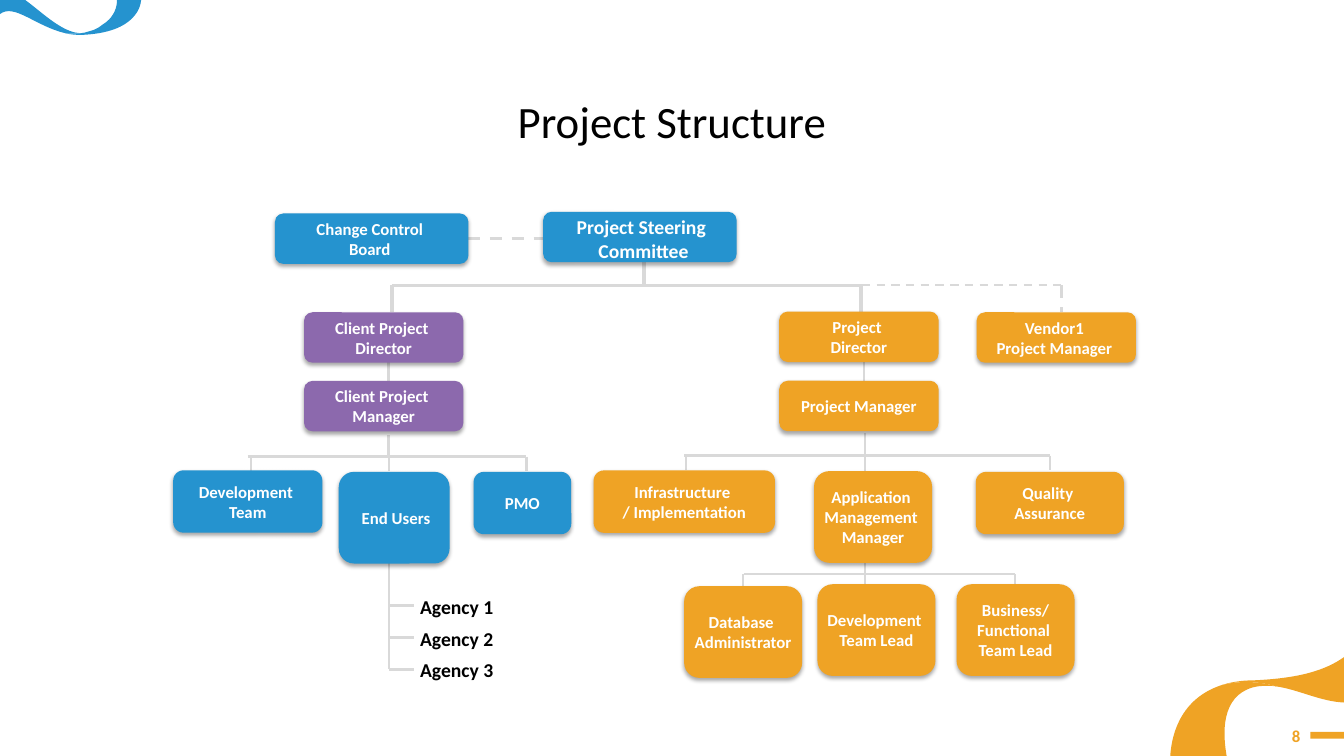
from lxml.etree import SubElement
from pptx import Presentation
from pptx.dml.color import RGBColor
from pptx.enum.dml import MSO_LINE
from pptx.enum.shapes import MSO_CONNECTOR, MSO_SHAPE
from pptx.enum.text import MSO_ANCHOR, MSO_AUTO_SIZE, PP_ALIGN
from pptx.oxml.ns import qn
from pptx.util import Pt

BLUE, ORANGE, PURPLE = "2593CF", "EFA325", "8C69AD"
GREY, WHITE, BLACK = "D9D9D9", "FFFFFF", "000000"

BOXES = [
    ("Change Control \nBoard ", 196.4, 152.5, 138.2, 36, BLUE),
    ("", 388, 151.3, 138.2, 36, BLUE),
    ("Client Project \nDirector", 217.2, 223.1, 113.8, 36, PURPLE),
    ("Client Project \nManager", 217.2, 272.1, 113.8, 36, PURPLE),
    ("Project \nDirector", 556.6, 222.6, 113.8, 36, ORANGE),
    ("Project Manager", 556.6, 272, 113.8, 36, ORANGE),
    ("Vendor1 \nProject Manager ", 697.6, 223.1, 113.8, 36, ORANGE),
    ("Development \nTeam", 123.7, 335.9, 106.6, 44.6, BLUE),
    (" End Users", 242, 337, 79.2, 65.5, BLUE),
    ("PMO", 338.3, 337, 69.8, 44.6, BLUE),
    ("Infrastructure \n/ Implementation", 424, 336, 129.6, 44.6, ORANGE),
    ("Application \nManagement \nManager", 581.5, 336.5, 84.3, 65.5, ORANGE),
    ("Quality \nAssurance", 697, 337, 105.8, 44.6, ORANGE),
    ("Database \nAdministrator", 488.7, 418.7, 84.3, 65.5, ORANGE),
    ("Development \nTeam Lead", 583.9, 417.3, 84.3, 65.5, ORANGE),
    ("Business/\nFunctional \nTeam Lead", 683.3, 417.3, 84.3, 65.5, ORANGE),
]

BRANCHES = [
    ((460, 187.2, 205.2), (280, 203.8, 615.6), (280, 615), 223, 2.25),
    ((277.3, 311, 326), (177.1, 326.2, 375.8), (179.3, 277.9, 375.8), 336.5, 2),
    ((617.8, 309.6, 337.7), (488.9, 325.4, 750.2), (490.3, 750.2), 336, 1.5),
    ((617.8, 402.5, 419), (531.4, 410.2, 725), (530.6, 725), 426, 1.5),
]

RIBBONS = [
    (ORANGE, (895, 491), [
        (900.7, 489.6, 905.8, 489.6, 911.5, 490.3),
        (911.5, 490.3, 892.8, 483.8, 871.9, 489.6),
        (840.2, 500.4, 836.6, 529.9, 835.9, 540),
        (876.2, 540),
        (873.4, 524.2, 871.9, 497.5, 895, 491)]),
    (ORANGE, (895, 486), [
        (886.3, 486, 878.4, 487.4, 871.9, 489.6),
        (892.8, 483.8, 911.5, 490.3, 911.5, 490.3),
        (927.4, 492.5, 943.2, 501.1, 960, 501.8),
        (960, 469.4),
        (946.8, 478.8, 928.1, 484.6, 895, 486)]),
    (BLUE, (100.8, -0.5), [
        (83.5, -0.5),
        (83.5, -0.5, 85, 10.8, 72.7, 18),
        (72.7, 18, 69.8, 20.9, 64.1, 22.3),
        (61.2, 23, 59.8, 23.8, 57.6, 23.8),
        (54.7, 23.8, 51.1, 23.8, 46.8, 23.8),
        (52.6, 25.2, 58.3, 25.2, 64.8, 24.5),
        (101.5, 20.9, 100.8, -0.5, 100.8, -0.5)]),
    (BLUE, (57.6, 23.8), [
        (36.7, 23, 13.7, -12.2, 0, -5.8),
        (0, 10.1),
        (10.1, 2.2, 25.2, 18.7, 46.8, 23.8),
        (51.1, 23.8, 54.7, 23.8, 57.6, 23.8)]),
]


def colour(value):
    return RGBColor.from_string(value)


def place(shape, left, top, width, height):
    shape.left, shape.top = Pt(left), Pt(top)
    shape.width, shape.height = Pt(width), Pt(height)


def paint(shape, fill):
    shape.shadow.inherit = False
    shape.fill.solid()
    shape.fill.fore_color.rgb = colour(fill)
    shape.line.fill.background()


def write(shape, text, size, ink, align, bold=True, wrap=False):
    frame = shape.text_frame
    frame.text = text
    frame.word_wrap = wrap
    frame.auto_size = MSO_AUTO_SIZE.NONE
    frame.vertical_anchor = MSO_ANCHOR.MIDDLE
    for para in frame.paragraphs:
        para.alignment = align
        for span in para.runs:
            span.font.name = "Calibri"
            span.font.size = Pt(size)
            span.font.bold = bold
            span.font.color.rgb = colour(ink)


def add_label(page, text, left, top, width, height, size, ink, align):
    label = page.shapes.add_textbox(Pt(left), Pt(top), Pt(width), Pt(height))
    write(label, text, size, ink, align, wrap=True)


def add_soft_shadow(shape):
    effects = shape._element.spPr.find(qn("a:effectLst"))
    shadow = SubElement(effects, qn("a:outerShdw"), blurRad=str(Pt(3.1)),
                        dist=str(Pt(1.8)), dir="5400000", rotWithShape="0")
    shade = SubElement(shadow, qn("a:srgbClr"), val=BLACK)
    SubElement(shade, qn("a:alpha"), val="35000")


def add_box(page, text, left, top, width, height, fill):
    box = page.shapes.add_shape(MSO_SHAPE.ROUNDED_RECTANGLE, Pt(left), Pt(top),
                                Pt(width), Pt(height))
    paint(box, fill)
    add_soft_shadow(box)
    if text:
        write(box, text, 12, WHITE, PP_ALIGN.CENTER)


def add_line(page, x1, y1, x2, y2, weight, dashed=False):
    line = page.shapes.add_connector(MSO_CONNECTOR.STRAIGHT, Pt(x1), Pt(y1), Pt(x2), Pt(y2))
    line.line.color.rgb = colour(GREY)
    line.line.width = Pt(weight)
    if dashed:
        line.line.dash_style = MSO_LINE.DASH
    SubElement(line._element.spPr, qn("a:effectLst"))


def add_branch(page, stem, bus, children, bottom, weight):
    x, top, end = stem
    left, level, right = bus
    add_line(page, x, top, x, end, weight)
    add_line(page, left, level, right, level, weight)
    for child in children:
        add_line(page, child, level, child, bottom, weight)


def add_ribbon(page, fill, start, segments):
    builder = page.shapes.build_freeform(Pt(start[0]), Pt(start[1]))
    builder.add_line_segments([(Pt(s[-2]), Pt(s[-1])) for s in segments], close=True)
    ribbon = builder.convert_to_shape()
    paint(ribbon, fill)
    edges = list(ribbon._element.iter(qn("a:lnTo")))
    for edge, segment in zip(edges, segments):
        if len(segment) == 6:
            bend(edge, segment, ribbon.left, ribbon.top)


def bend(edge, segment, left, top):
    edge.tag = qn("a:cubicBezTo")
    edge.remove(edge[0])
    for x, y in zip(segment[::2], segment[1::2]):
        SubElement(edge, qn("a:pt"), x=str(Pt(x) - left), y=str(Pt(y) - top))


def add_agencies(page):
    trunk, first, step = 277.9, 432.7, 22.65
    add_line(page, trunk, 402.5, trunk, first + 2 * step, 2)
    for index in range(3):
        y = first + index * step
        add_line(page, trunk, y, 296, y, 2)
        add_label(page, f"Agency {index + 1}", 293, y - 11.7, 76, 24.5, 14, BLACK, PP_ALIGN.LEFT)


def main():
    deck = Presentation()
    deck.slide_width, deck.slide_height = Pt(960), Pt(540)
    page = deck.slides.add_slide(deck.slide_layouts[5])
    title = page.shapes.title
    place(title, 349, 63.4, 262, 46)
    write(title, "Project Structure", 32, BLACK, PP_ALIGN.CENTER, bold=False)

    for branch in BRANCHES:
        add_branch(page, *branch)
    add_line(page, 277.3, 257.8, 277.3, 273, 2)
    add_line(page, 617, 257, 617, 273, 1.5)
    add_line(page, 334.2, 170.6, 388, 170.6, 2.25, dashed=True)
    add_line(page, 615.6, 203.8, 758.2, 203.8, 1.5, dashed=True)
    add_line(page, 758.2, 203.8, 758.2, 223.2, 2.25, dashed=True)
    add_agencies(page)
    for ribbon in RIBBONS:
        add_ribbon(page, *ribbon)
    for box in BOXES:
        add_box(page, *box)
    add_label(page, "Project Steering \nCommittee", 375.8, 150, 167.8, 41, 14,
              WHITE, PP_ALIGN.CENTER)

    add_label(page, "8", 883.4, 511.2, 52.6, 28.8, 12, ORANGE, PP_ALIGN.RIGHT)
    bar = page.shapes.add_shape(MSO_SHAPE.RECTANGLE, Pt(936), Pt(522.7), Pt(24), Pt(5))
    paint(bar, ORANGE)
    deck.save("out.pptx")


if __name__ == "__main__":
    main()
